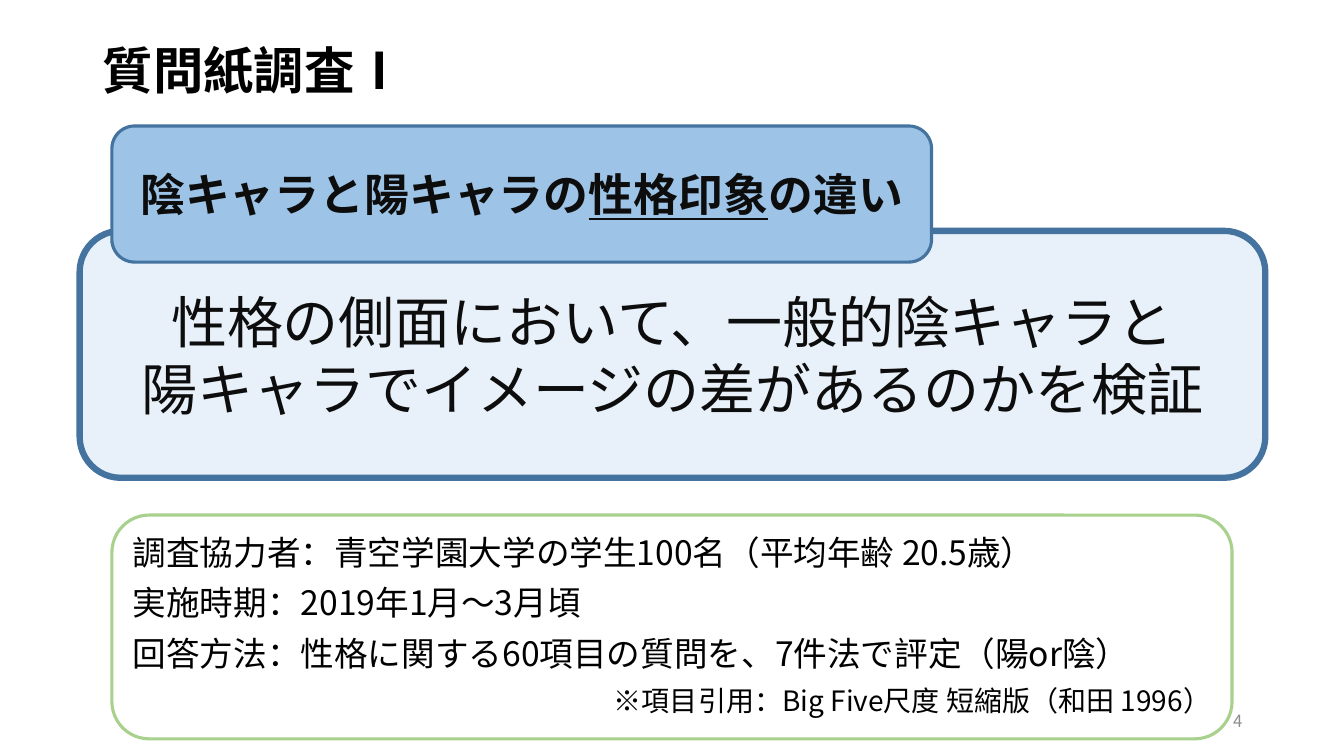
from lxml import etree
from pptx import Presentation
from pptx.dml.color import RGBColor
from pptx.enum.shapes import MSO_SHAPE as Preset
from pptx.enum.text import MSO_ANCHOR as Anchor, PP_ALIGN as Align
from pptx.oxml.ns import qn
from pptx.util import Inches, Pt

WIDTH, HEIGHT = 13.33, 7.5
SANS = "Noto Sans CJK JP"
COLORS = {
    "black": "000000", "ink": "0D0D0D", "gray": "8C8C8C",
    "pale": "DEEBF7", "sky": "9DC3E6", "navy": "43739E", "green": "A9D18E",
}


def rgb(name):
    return RGBColor.from_string(COLORS[name])


def style_run(run, color, face=SANS, **formats):
    run.font.color.rgb = rgb(color)
    for name, value in {"name": face, **formats}.items():
        setattr(run.font, name, value)
    # East Asian text needs its own typeface entry
    east_asian = etree.SubElement(run.font._element, qn("a:ea"))
    east_asian.set("typeface", face)


def write(frame, paragraphs, color, layout, **formats):
    """Each paragraph is a list of (text, format overrides)."""
    frame.word_wrap = True
    frame.vertical_anchor = Anchor.MIDDLE
    for index, pieces in enumerate(paragraphs):
        paragraph = frame.add_paragraph() if index else frame.paragraphs[0]
        for name, value in layout.items():
            setattr(paragraph, name, value)
        for text, overrides in pieces:
            run = paragraph.add_run()
            run.text = text
            style_run(run, color, **{**formats, **overrides})
    return frame.paragraphs


def add_label(slide, box, text, color, layout, **formats):
    label = slide.shapes.add_textbox(*map(Inches, box))
    write(label.text_frame, [[(text, {})]], color, layout, **formats)


def add_panel(slide, box, line, weight, fill=None, opacity=None):
    panel = slide.shapes.add_shape(Preset.ROUNDED_RECTANGLE, *map(Inches, box))
    panel.shadow.inherit = False
    panel.line.color.rgb = rgb(line)
    panel.line.width = Pt(weight)
    if fill:
        panel.fill.solid()
        panel.fill.fore_color.rgb = rgb(fill)
    else:
        panel.fill.background()
    if opacity:
        tint = panel.fill._xPr.find(qn("a:solidFill"))[0]
        etree.SubElement(tint, qn("a:alpha")).set("val", str(opacity * 1000))
    return panel.text_frame


def add_survey_details(slide, box):
    details = [
        "調査協力者：青空学園大学の学生100名（平均年齢 20.5歳）",
        "実施時期：2019年1月～3月頃",
        "回答方法：性格に関する60項目の質問を、7件法で評定（陽or陰）",
    ]
    citation = "※項目引用：Big Five尺度 短縮版（和田 1996）"
    layout = {"alignment": Align.JUSTIFY, "line_spacing": 0.9, "space_before": Pt(10)}
    rows = [[(text, {})] for text in details] + [[(citation, {"size": Pt(20)})]]
    frame = add_panel(slide, box, "green", 2.25)
    lines = write(frame, rows, "black", layout, size=Pt(24))
    lines[-1].alignment = Align.RIGHT


def add_research_aim(slide, box):
    left, top, width, height = box
    centered = {"alignment": Align.CENTER}
    # Aim statement
    aim = ["性格の側面において、一般的陰キャラと", "陽キャラでイメージの差があるのかを検証"]
    body_top = top + 1.04
    frame = add_panel(slide, (left, body_top, width, height - 1.04),
                      "navy", 4.5, "pale", 68)
    write(frame, [[(text, {})] for text in aim], "ink", centered, size=Pt(40))
    # Heading tab overlapping the statement
    heading = [("陰キャラと陽キャラの", {}), ("性格印象", {"underline": True}), ("の違い", {})]
    frame = add_panel(slide, (left + 0.32, top, 8.13, 1.35), "navy", 2.25, "sky")
    write(frame, [heading], "ink", centered, size=Pt(32), bold=True)


def build_survey_slide(deck):
    slide = deck.slides.add_slide(deck.slide_layouts[6])
    # Title
    add_label(slide, (0.92, 0, 11.5, 1.45), "質問紙調査Ⅰ", "black",
              {"line_spacing": 0.9}, face="Arial", size=Pt(36), bold=True)
    # Survey details and page number
    add_survey_details(slide, (1.11, 5.11, 11.11, 2.22))
    add_label(slide, (9.42, 6.95, 3, 0.4), "4", "gray",
              {"alignment": Align.RIGHT}, size=Pt(12))
    # Research aim
    add_research_aim(slide, (0.79, 1.25, 11.76, 3.49))


def main():
    deck = Presentation()
    deck.slide_width, deck.slide_height = Inches(WIDTH), Inches(HEIGHT)
    build_survey_slide(deck)
    deck.save("out.pptx")


if __name__ == "__main__":
    main()
